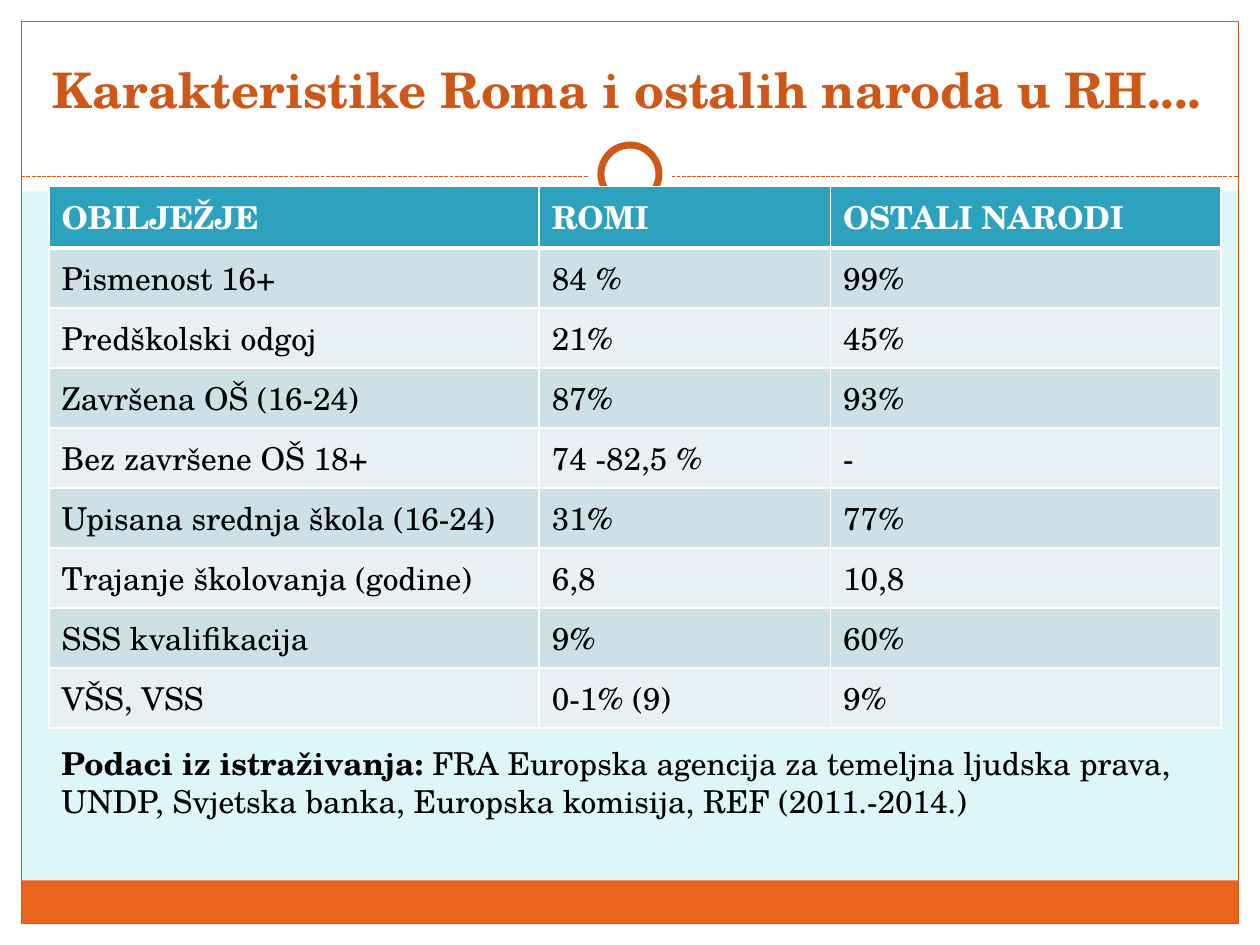
from lxml import etree
from pptx import Presentation
from pptx.dml.color import RGBColor
from pptx.enum.dml import MSO_LINE
from pptx.enum.shapes import MSO_CONNECTOR, MSO_SHAPE
from pptx.enum.text import MSO_ANCHOR, PP_ALIGN
from pptx.oxml.ns import qn
from pptx.util import Cm, Pt

RECT, OVAL = MSO_SHAPE.RECTANGLE, MSO_SHAPE.OVAL
STRAIGHT, DASH = MSO_CONNECTOR.STRAIGHT, MSO_LINE.SQUARE_DOT
MIDDLE, BOTTOM = MSO_ANCHOR.MIDDLE, MSO_ANCHOR.BOTTOM
CENTER, LEFT = PP_ALIGN.CENTER, PP_ALIGN.LEFT

TITLE = "Karakteristike Roma i ostalih naroda u RH...."
ROWS = [
    ("OBILJEŽJE", "ROMI", "OSTALI NARODI"),
    ("Pismenost 16+", "84 %", "99%"),
    ("Predškolski odgoj", "21%", "45%"),
    ("Završena OŠ (16-24)", "87%", "93%"),
    ("Bez završene OŠ 18+", "74 -82,5 %", "-"),
    ("Upisana srednja škola (16-24)", "31%", "77%"),
    ("Trajanje školovanja (godine)", "6,8", "10,8"),
    ("SSS kvalifikacija", "9%", "60%"),
    ("VŠS, VSS", "0-1% (9)", "9%"),
]
SOURCE = [
    ("Podaci iz istraživanja: ", True),
    ("FRA Europska agencija za temeljna ljudska prava, UNDP, Svjetska banka, "
     "Europska komisija, REF (2011.-2014.)", False),
]
THEME = {
    "font": "TeX Gyre Schola", "title_size": 28, "body_size": 18,
    "background": "DEF5FA", "white": "FFFFFF", "black": "000000",
    "accent": "CF5818", "footer": "EB641B",
    "header": "2DA2BF", "bands": ("CDE0E8", "E8F0F4"),
}

WIDTH, HEIGHT, MARGIN = 25.4, 19.05, 0.43
INNER_WIDTH, INNER_HEIGHT = WIDTH - 2 * MARGIN, HEIGHT - 2 * MARGIN
HEADER_HEIGHT, FOOTER_HEIGHT, RULE_Y = 3.86, 0.87, 3.56
RING_Y = 3.51
TABLE_LEFT, TABLE_TOP, ROW_HEIGHT = 0.99, 3.76, 1.21
COLUMN_WIDTHS = (9.88, 5.87, 7.87)


def color(name):
    return RGBColor.from_string(THEME.get(name, name))


def place(shape, box):
    for side, value in zip(("left", "top", "width", "height"), box):
        setattr(shape, side, Cm(value))


def add_panel(slide, preset, box, fill=None, line_width=None):
    panel = slide.shapes.add_shape(preset, *map(Cm, box))
    panel.shadow.inherit = False
    if fill:
        panel.fill.solid()
        panel.fill.fore_color.rgb = color(fill)
    else:
        panel.fill.background()
    if line_width:
        panel.line.color.rgb = color("accent")
        panel.line.width = Pt(line_width)
    else:
        panel.line.fill.background()


def add_ring(slide, diameter, line_width=None):
    box = ((WIDTH - diameter) / 2, RING_Y - diameter / 2, diameter, diameter)
    add_panel(slide, OVAL, box, "white", line_width)


def add_rule(slide):
    rule = slide.shapes.add_connector(
        STRAIGHT, Cm(MARGIN), Cm(RULE_Y), Cm(WIDTH - MARGIN), Cm(RULE_Y))
    rule.line.color.rgb = color("accent")
    rule.line.width = Pt(0.75)
    rule.line.dash_style = DASH
    properties = rule.element.find(qn("p:spPr"))
    etree.SubElement(properties, qn("a:effectLst"))


def write(frame, runs, size, ink, align=LEFT):
    paragraph = frame.paragraphs[0]
    paragraph.alignment = align
    for text, bold in runs:
        run = paragraph.add_run()
        run.text = text
        formats = {"name": THEME["font"], "size": Pt(THEME[size]), "bold": bold}
        for attribute, value in formats.items():
            setattr(run.font, attribute, value)
        run.font.color.rgb = color(ink)


def add_borders(cell, widths):
    properties = cell.fill and cell._tc.get_or_add_tcPr()
    for position, (side, width) in enumerate(widths.items()):
        border = etree.Element(qn(f"a:ln{side}"), w=str(Pt(width)))
        fill = etree.SubElement(border, qn("a:solidFill"))
        etree.SubElement(fill, qn("a:srgbClr"), val=THEME["white"])
        properties.insert(position, border)


def add_frame(slide):
    side_panels = [
        (0, HEIGHT - MARGIN, WIDTH, MARGIN),
        (0, 0, WIDTH, HEADER_HEIGHT),
        (0, 0, MARGIN, HEIGHT),
        (WIDTH - MARGIN, 0, MARGIN, HEIGHT),
    ]
    for box in side_panels:
        add_panel(slide, RECT, box, "white")
    footer_top = HEIGHT - MARGIN - FOOTER_HEIGHT
    add_panel(slide, RECT, (MARGIN, footer_top, INNER_WIDTH, FOOTER_HEIGHT), "footer")
    add_panel(slide, RECT, (MARGIN, MARGIN, INNER_WIDTH, INNER_HEIGHT), line_width=0.75)
    add_rule(slide)
    add_ring(slide, 1.7)
    add_ring(slide, 1.17, 4)


def add_title(slide):
    title = slide.shapes.title
    title.element.getparent().append(title.element)
    place(title, (0.79, 1.57, 23.7, 0.94))
    frame = title.text_frame
    formats = {"vertical_anchor": BOTTOM, "margin_left": 0, "margin_right": 0,
               "word_wrap": True}
    for attribute, value in formats.items():
        setattr(frame, attribute, value)
    write(frame, [(TITLE, True)], "title_size", "accent", CENTER)


def add_comparison(slide):
    box = (TABLE_LEFT, TABLE_TOP, sum(COLUMN_WIDTHS), ROW_HEIGHT * len(ROWS))
    table = slide.shapes.add_table(
        len(ROWS), len(COLUMN_WIDTHS), *map(Cm, box)).table
    for column, width in zip(table.columns, COLUMN_WIDTHS):
        column.width = Cm(width)
    for row_index, values in enumerate(ROWS):
        table.rows[row_index].height = Cm(ROW_HEIGHT)
        is_header = row_index == 0
        fill = THEME["header"] if is_header else THEME["bands"][(row_index - 1) % 2]
        widths = {"L": 1, "R": 1, "T": 3 if row_index == 1 else 1,
                  "B": 3 if is_header else 1}
        for column_index, value in enumerate(values):
            cell = table.cell(row_index, column_index)
            cell.vertical_anchor = MIDDLE
            cell.fill.solid()
            cell.fill.fore_color.rgb = color(fill)
            add_borders(cell, widths)
            write(cell.text_frame, [(value, is_header)], "body_size",
                  "white" if is_header else "black")


def add_source(slide):
    source = slide.shapes.add_textbox(*map(Cm, (TABLE_LEFT, 14.88, 23.01, 1.8)))
    source.text_frame.word_wrap = True
    write(source.text_frame, SOURCE, "body_size", "black")


def main():
    """Build the slide comparing Roma with other peoples in Croatia."""
    deck = Presentation()
    deck.slide_width, deck.slide_height = Cm(WIDTH), Cm(HEIGHT)
    slide = deck.slides.add_slide(deck.slide_layouts[5])
    slide.background.fill.solid()
    slide.background.fill.fore_color.rgb = color("background")
    add_frame(slide)
    add_title(slide)
    add_comparison(slide)
    add_source(slide)
    deck.save("out.pptx")


if __name__ == "__main__":
    main()
